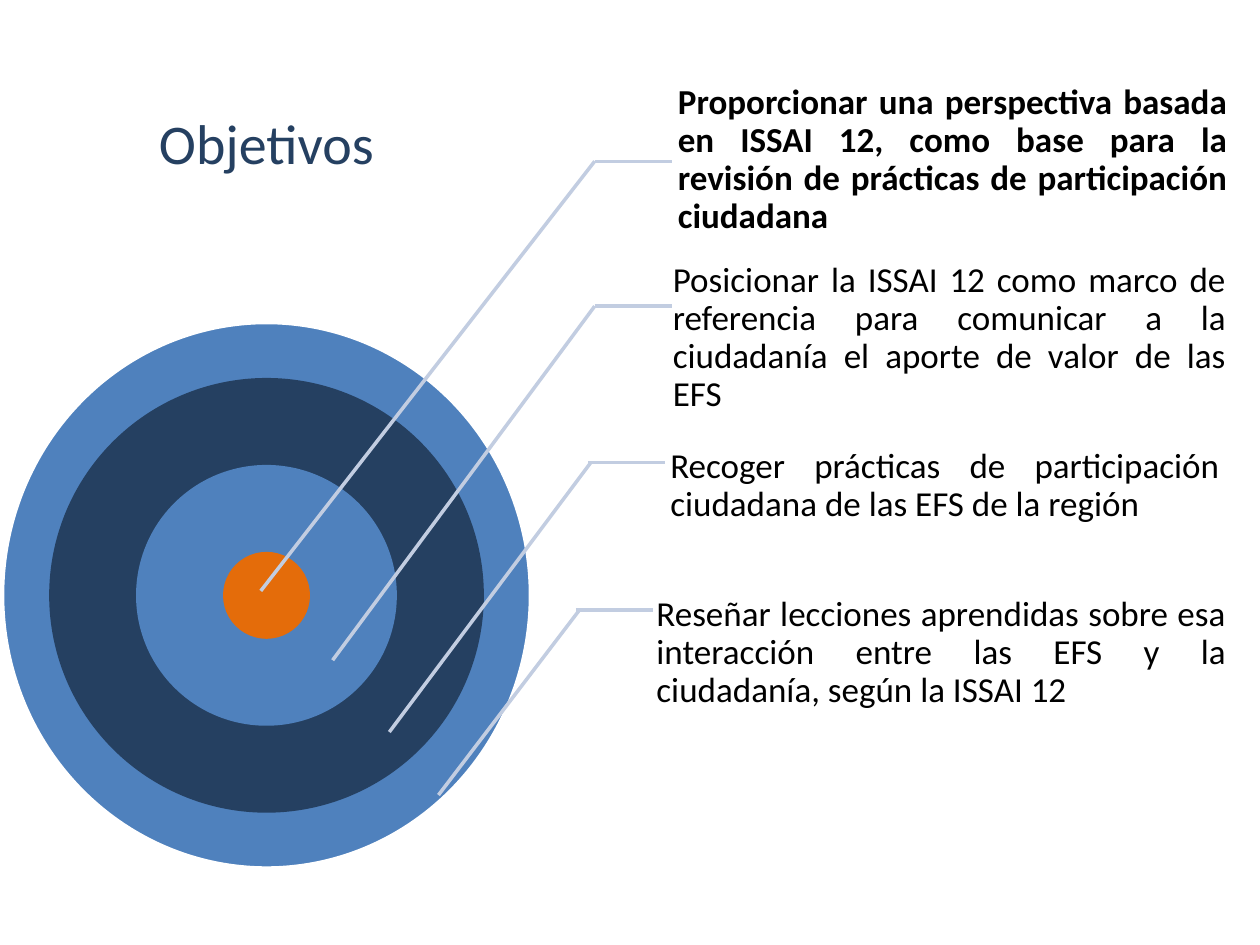
from lxml import etree
from pptx import Presentation
from pptx.dml.color import RGBColor
from pptx.enum import shapes, text
from pptx.oxml.ns import qn
from pptx.util import Inches, Pt

BLUE, NAVY, ORANGE, PALE = "4F81BD", "254061", "E46C0A", "C2CDE1"


def rgb(value):
    return RGBColor.from_string(value)


def add_line(s, start, end):
    line = s.shapes.add_connector(
        shapes.MSO_CONNECTOR.STRAIGHT, *[Inches(v) for v in (*start, *end)])
    line.line.color.rgb = rgb(PALE)
    line.line.width = Pt(2)
    etree.SubElement(line._element.spPr, qn("a:effectLst"))


prs = Presentation()
prs.slide_width, prs.slide_height = Inches(10), Inches(7.5)
s = prs.slides.add_slide(prs.slide_layouts[5])

title = s.shapes.title
title.left, title.top = Inches(-0.86), Inches(0.23)
title.width, title.height = Inches(5.95), Inches(1.8)
tf = title.text_frame
tf.vertical_anchor = text.MSO_ANCHOR.MIDDLE
p = tf.paragraphs[0]
p.text = "Objetivos"
p.alignment = text.PP_ALIGN.CENTER
p.font.name, p.font.size = "Calibri", Pt(32)
p.font.color.rgb = rgb(NAVY)

# Target rings share one centre, outermost first
center_x, center_y = 2.115, 4.725
rings = [(4.19, 4.33, BLUE), (3.45, 3.45, NAVY),
         (2.07, 2.07, BLUE), (0.69, 0.69, ORANGE)]
for i, (width, height, color) in enumerate(rings):
    ring = s.shapes.add_shape(
        shapes.MSO_SHAPE.OVAL,
        Inches(center_x - width / 2), Inches(center_y - height / 2),
        Inches(width), Inches(height))
    ring.shadow.inherit = False
    ring.fill.solid()
    ring.fill.fore_color.rgb = rgb(color)
    if i == 0:
        ring.line.color.rgb = rgb("FFFFFF")
        ring.line.width = Pt(2)
    else:
        ring.line.fill.background()

# Text, its box, the left end and height of the leader's shelf,
# where the slanted part starts, and the point on the target
goals = [
    ("Proporcionar una perspectiva basada en ISSAI 12, como base para la "
     "revisión de prácticas de participación ciudadana",
     (5.22, 0.47, 4.55, 1.6), (4.72, 1.28), 4.72, (2.07, 4.69)),
    ("Posicionar la ISSAI 12 como marco de referencia para comunicar a la "
     "ciudadanía el aporte de valor de las EFS",
     (5.18, 2.11, 4.58, 1.15), (4.72, 2.43), 4.72, (2.64, 5.24)),
    ("Recoger prácticas de participación ciudadana de las EFS de la región",
     (5.16, 3.28, 4.55, 1.15), (4.67, 3.67), 4.69, (3.09, 5.81)),
    ("Reseñar lecciones aprendidas sobre esa interacción entre las EFS y la "
     "ciudadanía, según la ISSAI 12",
     (5.05, 4.61, 4.71, 1.15), (4.57, 4.84), 4.6, (3.48, 6.31)),
]
for i, (goal, box, (shelf_x, shelf_y), bend_x, target) in enumerate(goals):
    sp = s.shapes.add_textbox(*[Inches(v) for v in box])
    tf = sp.text_frame
    tf.word_wrap = True
    tf.vertical_anchor = text.MSO_ANCHOR.MIDDLE
    tf.margin_left = Inches(0.16)
    tf.margin_top = tf.margin_right = tf.margin_bottom = Inches(0.03)
    p = tf.paragraphs[0]
    p.text = goal
    p.alignment = text.PP_ALIGN.JUSTIFY
    p.line_spacing = 0.9
    p.font.name, p.font.size = "Calibri", Pt(20)
    p.font.bold = i == 0
    p.font.color.rgb = rgb("000000")
    add_line(s, (shelf_x, shelf_y), (shelf_x + 0.61, shelf_y))
    add_line(s, (bend_x, shelf_y), target)

prs.save("out.pptx")
